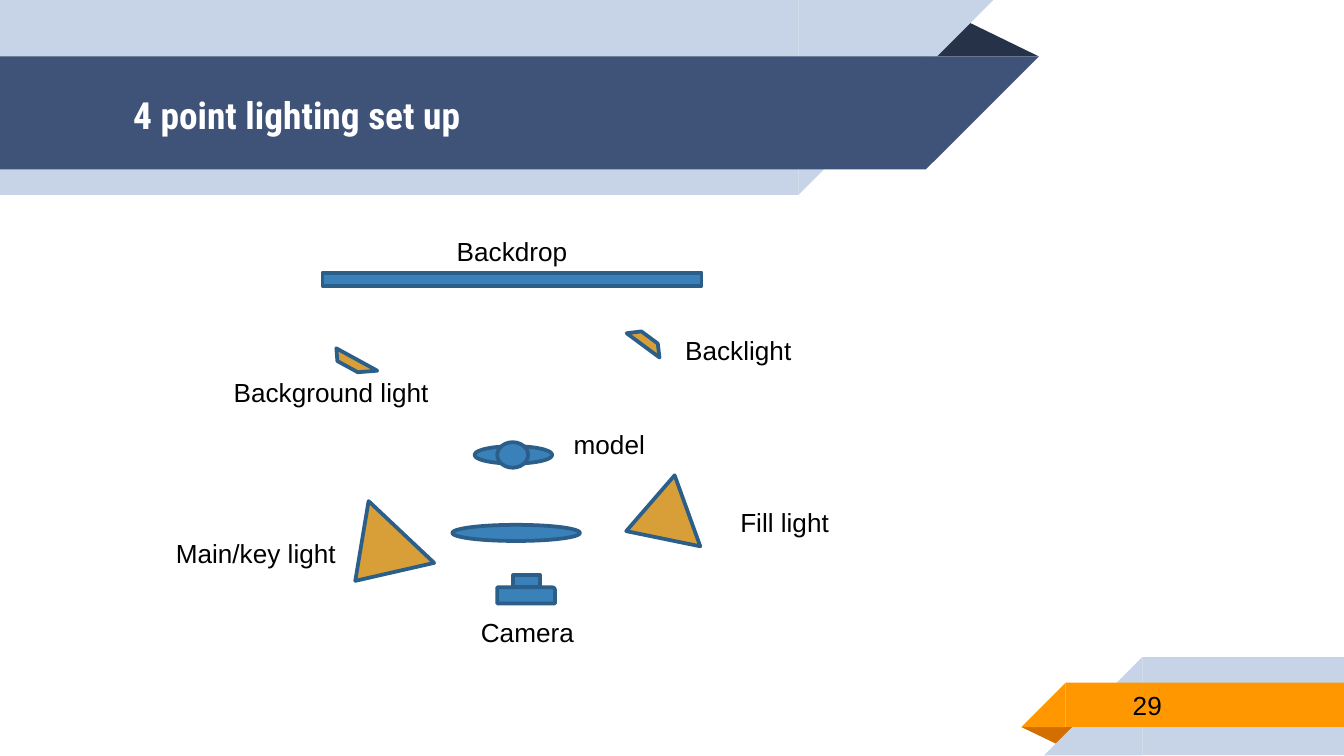
import pptx
from pptx.dml.color import RGBColor
from pptx.enum.shapes import MSO_SHAPE
from pptx.enum.text import MSO_ANCHOR, MSO_AUTO_SIZE, PP_ALIGN
from pptx.util import Inches, Pt

PALE = RGBColor(0xC7, 0xD3, 0xE6)
NAVY = RGBColor(0x3F, 0x53, 0x78)
DARK = RGBColor(0x26, 0x32, 0x48)
ORANGE = RGBColor(0xFF, 0x98, 0x00)
RUST = RGBColor(0xD2, 0x6F, 0x00)
BLUE = RGBColor(0x3A, 0x81, 0xBA)
GOLD = RGBColor(0xD8, 0x9F, 0x39)
OUTLINE = RGBColor(0x2B, 0x5F, 0x8A)
BLACK = RGBColor(0, 0, 0)
WHITE = RGBColor(255, 255, 255)

SLIDE_W = 10
SLIDE_H = SLIDE_W * 9 / 16
TITLE = "4 point lighting set up"
PAGE = "29"

# Ribbons: straight length, top, height, colour
HEADER_BANDS = [(5.94, 0, 1.45, PALE), (6.89, 0.42, 0.84, NAVY)]
FOOTER_BANDS = [(1.5, 4.89, 0.73, PALE), (2.07, 5.08, 0.33, ORANGE)]

# Equipment: preset, (left, top, width, height), rotation, fill
EQUIPMENT = [
    (MSO_SHAPE.ROUND_1_RECTANGLE, (3.7, 4.37, 0.43, 0.12), 0, BLUE),      # camera body
    (MSO_SHAPE.RECTANGLE, (3.82, 4.28, 0.2, 0.09), 0, BLUE),              # camera lens
    (MSO_SHAPE.ISOSCELES_TRIANGLE, (2.48, 3.89, 0.67, 0.5), 223.3, GOLD),  # key light
    (MSO_SHAPE.ISOSCELES_TRIANGLE, (4.75, 3.66, 0.55, 0.49), 130.9, GOLD),  # fill light
    (MSO_SHAPE.OVAL, (3.78, 3.49, 0.12, 0.95), 90, BLUE),                 # reflector
    (MSO_SHAPE.OVAL, (3.53, 3.32, 0.58, 0.13), 0, BLUE),                  # model shoulders
    (MSO_SHAPE.OVAL, (3.7, 3.29, 0.23, 0.19), 0, BLUE),                   # model head
    (MSO_SHAPE.DIAGONAL_STRIPE, (4.68, 2.46, 0.21, 0.22), 82.8, GOLD),    # backlight
    (MSO_SHAPE.DIAGONAL_STRIPE, (2.56, 2.53, 0.19, 0.29), 265.5, GOLD),   # background light
    (MSO_SHAPE.RECTANGLE, (2.4, 2.03, 2.82, 0.1), 0, BLUE),               # backdrop
]

# Labels: text, left, top, width
LABELS = [
    ("Camera", 3.48, 4.54, 0.9),
    ("Main/key light", 1.21, 3.95, 1.4),
    ("Fill light", 5.41, 3.72, 0.87),
    ("model", 4.17, 3.14, 0.73),
    ("Backlight", 5, 2.44, 1),
    ("Backdrop", 3.3, 1.7, 1.03),
    ("Background light", 1.64, 2.75, 1.66),
]
LABEL_H = 0.34


def add_shape(s, preset, box, fill, rotation=0, flip=False, line=None):
    sp = s.shapes.add_shape(preset, *map(Inches, box))
    sp.shadow.inherit = False
    sp.fill.solid()
    sp.fill.fore_color.rgb = fill
    sp.rotation = rotation
    if flip:
        sp._element.spPr.xfrm.set("flipH", "1")
    if line is None:
        sp.line.fill.background()
    else:
        sp.line.color.rgb = line
        sp.line.width = Pt(2)
    return sp


def set_text(sp, text, size=14, font="Arial", color=BLACK, bold=False,
             anchor=MSO_ANCHOR.TOP, wrap=True, inset=0.05,
             fit=MSO_AUTO_SIZE.NONE):
    tf = sp.text_frame
    tf.word_wrap = wrap
    tf.auto_size = fit
    tf.vertical_anchor = anchor
    tf.margin_left = tf.margin_right = Inches(0.1)
    tf.margin_top = tf.margin_bottom = Inches(inset)
    p = tf.paragraphs[0]
    p.alignment = PP_ALIGN.LEFT
    r = p.add_run()
    r.text = text
    r.font.size = Pt(size)
    r.font.name = font
    r.font.bold = bold
    r.font.color.rgb = color


prs = pptx.Presentation()
prs.slide_width, prs.slide_height = Inches(SLIDE_W), Inches(SLIDE_H)
s = prs.slides.add_slide(prs.slide_layouts[5])

# Header ribbon: each band ends in a 45-degree cut on the right
fold = add_shape(s, MSO_SHAPE.ISOSCELES_TRIANGLE, (6.88, 0.14, 0.85, 0.28), DARK)
fold.adjustments[0] = 0.324
for length, top, h, color in HEADER_BANDS:
    add_shape(s, MSO_SHAPE.RECTANGLE, (0, top, length, h), color)
    add_shape(s, MSO_SHAPE.RIGHT_TRIANGLE, (length, top, h, h), color,
              rotation=180, flip=True)

# Footer ribbon: each band ends in a 45-degree cut on the left
fold = add_shape(s, MSO_SHAPE.ISOSCELES_TRIANGLE, (7.6, 5.41, 0.43, 0.14), RUST,
                 rotation=180)
fold.adjustments[0] = 0.324
for length, top, h, color in FOOTER_BANDS:
    left = SLIDE_W - length
    add_shape(s, MSO_SHAPE.RECTANGLE, (left, top, length, h), color)
    add_shape(s, MSO_SHAPE.RIGHT_TRIANGLE, (left - h, top, h, h), color, flip=True)

# Title, brought in front of the ribbon, and page number
title = s.shapes.title
s.shapes._spTree.append(title._element)
title.left, title.top, title.width, title.height = map(Inches, (0.89, 0.43, 6.01, 0.84))
set_text(title, TITLE, size=20, font="Roboto Condensed", color=WHITE, bold=True,
         anchor=MSO_ANCHOR.MIDDLE, inset=0.1)
page = s.shapes.add_textbox(*map(Inches, (8.33, 5.07, 1.63, 0.35)))
set_text(page, PAGE, anchor=MSO_ANCHOR.MIDDLE, inset=0.1)

# Lighting diagram
for preset, box, rotation, fill in EQUIPMENT:
    add_shape(s, preset, box, fill, rotation=rotation, line=OUTLINE)
for text, left, top, width in LABELS:
    label = s.shapes.add_textbox(*map(Inches, (left, top, width, LABEL_H)))
    set_text(label, text, wrap=False, fit=MSO_AUTO_SIZE.SHAPE_TO_FIT_TEXT)

prs.save("out.pptx")
